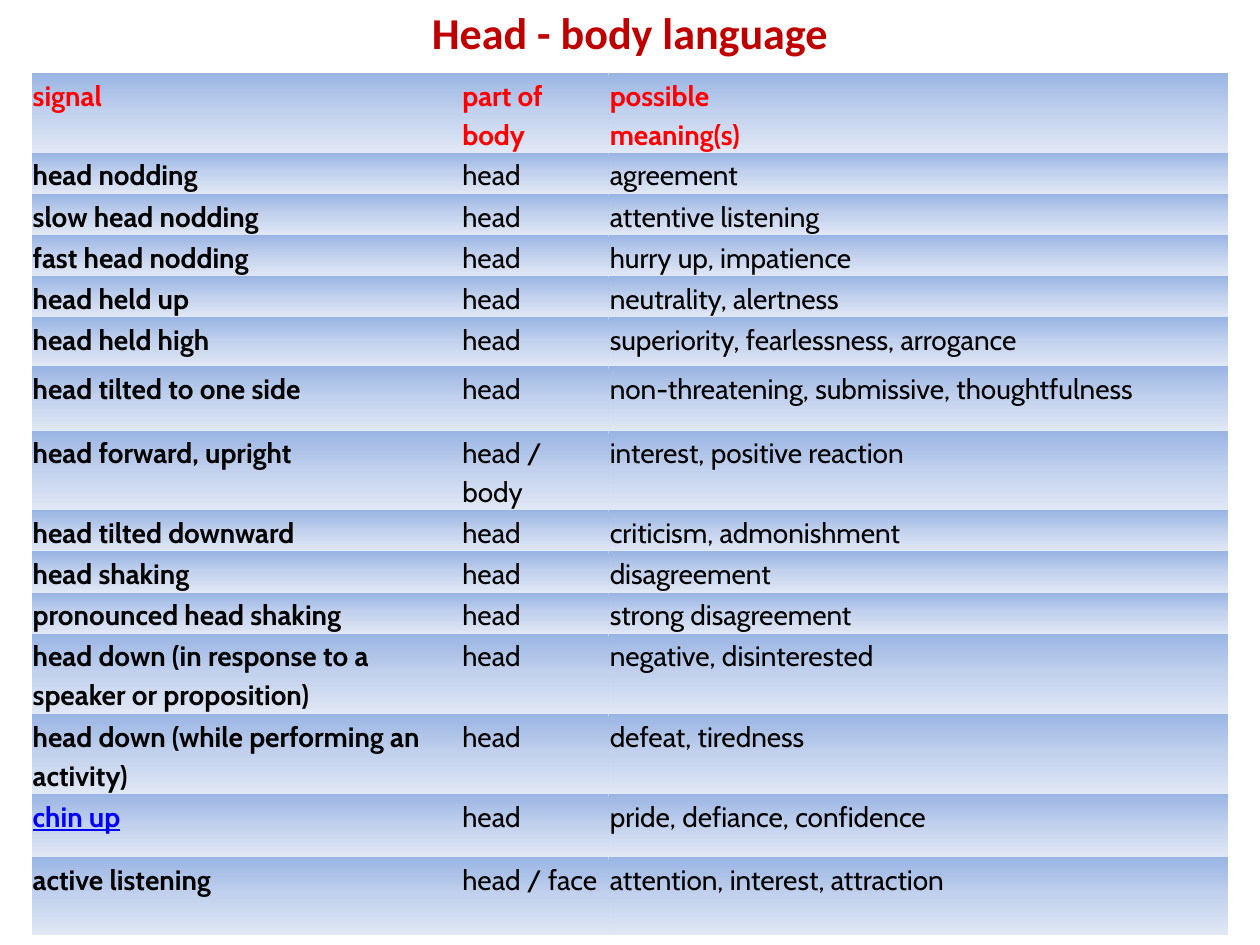
from lxml import etree
from pptx import Presentation
from pptx import util as u
from pptx.dml.color import RGBColor
from pptx.enum import text
from pptx.oxml import ns

# Content
TITLE = "Head - body language"
HEADINGS = ("signal", "part of body", "possible \vmeaning(s)")
SIGNALS = [  # signal, part of body, possible meanings, row height
    ("head nodding", "head", "agreement", 0.32),
    ("slow head nodding", "head", "attentive listening", 0.32),
    ("fast head nodding", "head", "hurry up, impatience", 0.32),
    ("head held up", "head", "neutrality, alertness", 0.32),
    ("head held high", "head", "superiority, fearlessness, arrogance", 0.39),
    ("head tilted to one side", "head", "non-threatening, submissive, thoughtfulness", 0.51),
    ("head forward, upright", "head / body", "interest, positive reaction", 0.62),
    ("head tilted downward", "head", "criticism, admonishment", 0.32),
    ("head shaking", "head", "disagreement", 0.32),
    ("pronounced head shaking", "head", "strong disagreement", 0.32),
    ("head down (in response to a speaker or proposition)", "head", "negative, disinterested", 0.64),
    ("head down (while performing an activity)", "head", "defeat, tiredness", 0.62),
    ("chin up", "head", "pride, defiance, confidence", 0.5),
    ("active listening", "head / face", "attention, interest, attraction", 0.62),
]
LINKED = "chin up"

THEME = {
    "title": ("Calibri", 25.2, "C00000"),
    "heading": ("Cabin", 16, "FF0000"),
    "body": ("Cabin", 16, "000000"),
    "linked": ("Cabin", 16, "0000FF"),
    "gradient": ((0, "9AB5E4"), (50, "C2D1ED"), (100, "E1E8F5")),
    "line_spacing": 1.15,
    "no_grid": "{2D5ABB26-0587-4C30-8999-92F81FD0307C}",
}

# Grid, in inches
WIDTH, HEIGHT = 10, 7.5
TITLE_BOX = (0.5, 0, WIDTH - 1, 0.5)
COLUMNS = (3.41, 1.17, 4.92)
HEADING_HEIGHT = 0.62
TABLE_TOP = 0.58
INSET = u.Inches(0.01)


def style(paragraph, role, bold, underline=False):
    name, size, color = THEME[role]
    for run in paragraph.runs:
        font = run.font
        font.name, font.size, font.bold = name, u.Pt(size), bold
        font.color.rgb = RGBColor.from_string(color)
        if underline:
            font.underline = True
    # Line breaks keep the size of the text around them
    for line_break in paragraph._p.findall(ns.qn("a:br")):
        etree.SubElement(line_break, ns.qn("a:rPr"), sz=str(int(size * 100)))


def shade(cell):
    gradient = etree.SubElement(cell._tc.get_or_add_tcPr(), ns.qn("a:gradFill"), rotWithShape="1")
    stops = etree.SubElement(gradient, ns.qn("a:gsLst"))
    for position, color in THEME["gradient"]:
        stop = etree.SubElement(stops, ns.qn("a:gs"), pos=str(position * 1000))
        etree.SubElement(stop, ns.qn("a:srgbClr"), val=color)
    etree.SubElement(gradient, ns.qn("a:lin"), ang=str(90 * 60000), scaled="0")


def fill_cell(cell, wording, role, bold):
    cell.margin_left = cell.margin_right = cell.margin_top = cell.margin_bottom = INSET
    paragraph = cell.text_frame.paragraphs[0]
    paragraph.text = wording
    paragraph.line_spacing = THEME["line_spacing"]
    style(paragraph, role, bold, underline=role == "linked")
    shade(cell)


def add_title(slide):
    frame = slide.shapes.add_textbox(*map(u.Inches, TITLE_BOX)).text_frame
    frame.word_wrap = True
    frame.vertical_anchor = text.MSO_ANCHOR.MIDDLE
    frame.text = TITLE
    frame.paragraphs[0].alignment = text.PP_ALIGN.CENTER
    style(frame.paragraphs[0], "title", True)


def add_signals(slide):
    heights = [HEADING_HEIGHT] + [row[-1] for row in SIGNALS]
    left = (WIDTH - sum(COLUMNS)) / 2
    box = map(u.Inches, (left, TABLE_TOP, sum(COLUMNS), sum(heights)))
    signals = slide.shapes.add_table(len(heights), len(COLUMNS), *box).table
    signals.first_row = signals.horz_banding = False
    signals._tbl.tblPr.find(ns.qn("a:tableStyleId")).text = THEME["no_grid"]
    for column, width in zip(signals.columns, COLUMNS):
        column.width = u.Inches(width)
    for row, height in zip(signals.rows, heights):
        row.height = u.Inches(height)

    for c, heading in enumerate(HEADINGS):
        fill_cell(signals.cell(0, c), heading, "heading", True)
    for r, (*wordings, _) in enumerate(SIGNALS, start=1):
        for c, wording in enumerate(wordings):
            role = "linked" if wording == LINKED else "body"
            fill_cell(signals.cell(r, c), wording, role, c == 0)


def main():
    deck = Presentation()
    deck.slide_width, deck.slide_height = u.Inches(WIDTH), u.Inches(HEIGHT)
    slide = deck.slides.add_slide(deck.slide_layouts[6])
    add_title(slide)
    add_signals(slide)
    deck.save("out.pptx")


if __name__ == "__main__":
    main()
